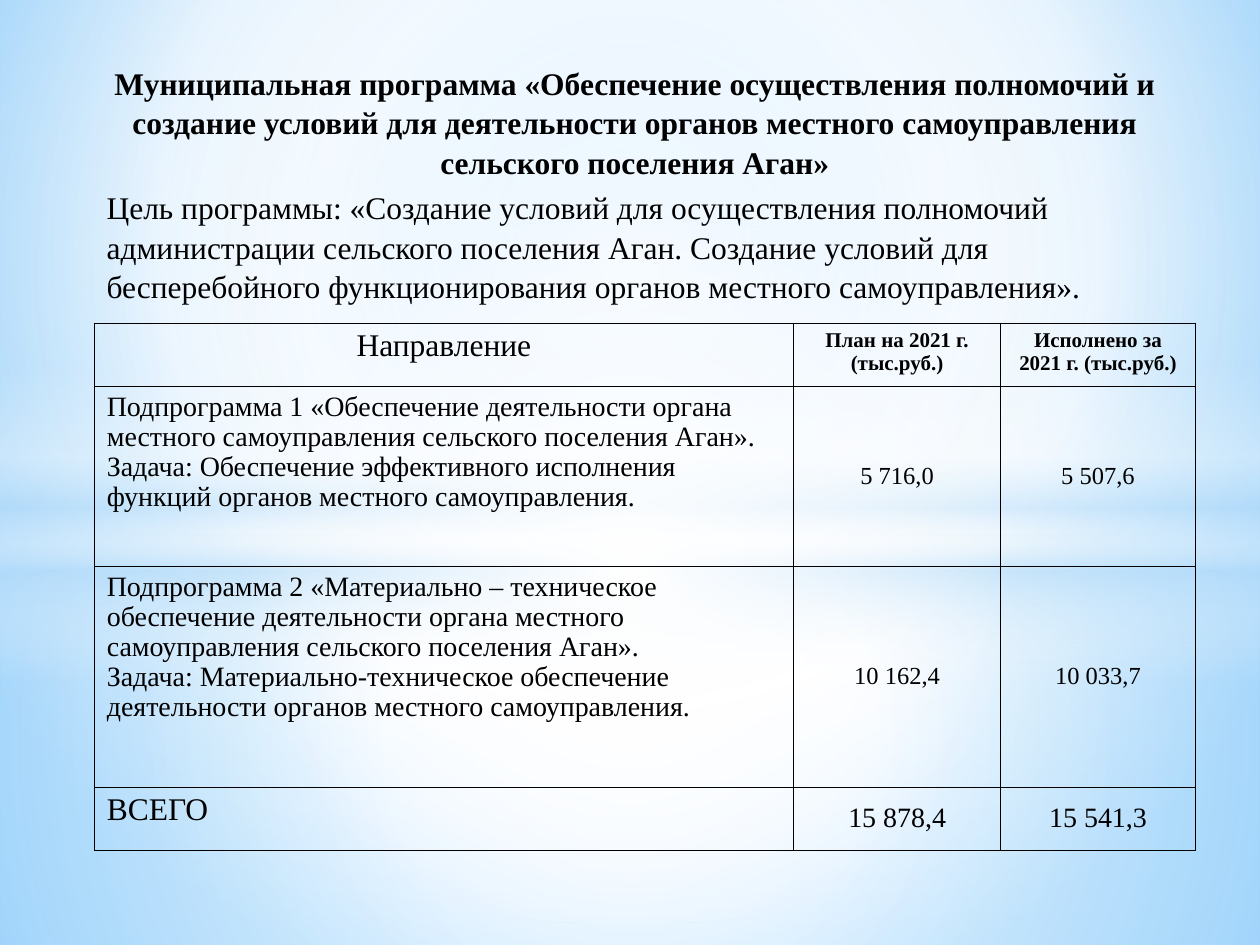
from dataclasses import dataclass
from typing import Optional

import pptx
import pptx.dml.color
import pptx.enum.shapes
import pptx.enum.text
import pptx.oxml
import pptx.oxml.ns
import pptx.util
from pptx.dml.color import RGBColor
from pptx.util import Cm

BLACK = RGBColor(0x00, 0x00, 0x00)
WHITE = RGBColor(0xFF, 0xFF, 0xFF)
PALE_BLUE = RGBColor(0xB4, 0xDC, 0xFA)
SKY = RGBColor(0x9E, 0xD5, 0xFF)
BRIGHT_BLUE = RGBColor(0x5B, 0xB9, 0xFF)

FONT = "Times New Roman"
LEFT = pptx.enum.text.PP_ALIGN.LEFT
CENTER = pptx.enum.text.PP_ALIGN.CENTER
TOP = pptx.enum.text.MSO_ANCHOR.TOP
MIDDLE = pptx.enum.text.MSO_ANCHOR.MIDDLE
RECTANGLE = pptx.enum.shapes.MSO_SHAPE.RECTANGLE
OVAL = pptx.enum.shapes.MSO_SHAPE.OVAL
MIDPOINT = (50, 50, 50, 50)


@dataclass
class Stop:
    position: int
    color: RGBColor
    opacity: int = 100


@dataclass
class Glow:
    """A full-width backdrop shape; a focus of None means a vertical gradient."""
    kind: int
    top: float
    height: float
    stops: list[Stop]
    focus: Optional[tuple[int, int, int, int]] = MIDPOINT


@dataclass
class Entry:
    text: str
    size: int
    bold: bool = False
    align: int = CENTER
    anchor: int = MIDDLE


GLOWS = [
    Glow(RECTANGLE, 10.75, 8.3,
         [Stop(0, WHITE, 91), Stop(37, WHITE, 76), Stop(100, PALE_BLUE, 79)]),
    Glow(RECTANGLE, 0, 10.75,
         [Stop(0, WHITE, 89), Stop(48, WHITE, 62), Stop(100, PALE_BLUE, 79)]),
    Glow(RECTANGLE, 7.37, 6.35,
         [Stop(0, WHITE, 0), Stop(29, WHITE, 30), Stop(45, PALE_BLUE, 40),
          Stop(55, WHITE, 26), Stop(65, PALE_BLUE, 60), Stop(100, WHITE, 0)], None),
    Glow(OVAL, 4.45, 14.17, [Stop(0, WHITE), Stop(54, WHITE, 0)]),
]

HEADING = ("Муниципальная программа «Обеспечение осуществления полномочий и создание "
           "условий для деятельности органов местного самоуправления сельского поселения Аган»")
GOAL = ("Цель программы: «Создание условий для осуществления полномочий администрации "
        "сельского поселения Аган. Создание условий для бесперебойного функционирования "
        "органов местного самоуправления».")

COLUMN_WIDTHS = [14.1, 4.17, 3.93]
ROW_HEIGHTS = [1.27, 3.63, 4.45, 1.27]
ROWS = [
    [Entry("Направление", 18, anchor=TOP),
     Entry("План на 2021 г.\n(тыс.руб.)", 12, True, anchor=TOP),
     Entry("Исполнено за\n2021 г. (тыс.руб.)", 12, True, anchor=TOP)],
    [Entry("Подпрограмма 1 «Обеспечение деятельности органа местного самоуправления "
           "сельского поселения Аган».\nЗадача: Обеспечение эффективного исполнения "
           "функций органов местного самоуправления.", 16, align=LEFT, anchor=TOP),
     Entry("5 716,0", 14), Entry("5 507,6", 14)],
    [Entry("Подпрограмма 2 «Материально – техническое обеспечение деятельности органа "
           "местного самоуправления сельского поселения Аган».\nЗадача: "
           "Материально-техническое обеспечение деятельности органов местного "
           "самоуправления.", 16, align=LEFT, anchor=TOP),
     Entry("10 162,4", 14), Entry("10 033,7", 14)],
    [Entry("ВСЕГО", 18, align=LEFT, anchor=TOP),
     Entry("15 878,4", 16), Entry("15 541,3", 16)],
]


def set_gradient(fill, element, stops: list[Stop], focus) -> None:
    """Give the fill inside element its stops and direction."""
    fill.gradient()
    gradient = next(element.iter(pptx.oxml.ns.qn("a:gradFill")))
    marks = "".join(
        f'<a:gs pos="{stop.position * 1000}"><a:srgbClr val="{stop.color}">'
        f'<a:alpha val="{stop.opacity * 1000}"/></a:srgbClr></a:gs>' for stop in stops)
    if focus is None:
        direction = '<a:lin ang="5400000" scaled="0"/>'
    else:
        sides = " ".join(f'{side}="{value * 1000}"' for side, value in zip("ltrb", focus))
        direction = f'<a:path path="circle"><a:fillToRect {sides}/></a:path>'
    gradient.getparent().replace(gradient, pptx.oxml.parse_xml(
        f'<a:gradFill {pptx.oxml.ns.nsdecls("a")} rotWithShape="1">'
        f'<a:gsLst>{marks}</a:gsLst>{direction}</a:gradFill>'))


def draw_glow(page, glow: Glow, width: int) -> None:
    shape = page.shapes.add_shape(glow.kind, 0, Cm(glow.top), width, Cm(glow.height))
    shape.shadow.inherit = False
    shape.line.fill.background()
    set_gradient(shape.fill, shape.element, glow.stops, glow.focus)


def write(frame, entry: Entry, spacing: float) -> None:
    frame.text = entry.text
    for para in frame.paragraphs:
        para.alignment = entry.align
        para.line_spacing = spacing
        para.space_before = para.space_after = pptx.util.Pt(0)
        for span in para.runs:
            span.font.name = FONT
            span.font.size = pptx.util.Pt(entry.size)
            span.font.bold = entry.bold
            span.font.color.rgb = BLACK


def place_text(box, top: float, height: float, entry: Entry) -> None:
    box.left, box.top, box.width, box.height = Cm(1.9), Cm(top), Cm(21.8), Cm(height)
    frame = box.text_frame
    write(frame, entry, 1.05)
    frame.word_wrap = True
    frame.auto_size = pptx.enum.text.MSO_AUTO_SIZE.NONE
    frame.vertical_anchor = entry.anchor


def outline_cell(cell) -> None:
    properties = cell._tc.get_or_add_tcPr()
    for index, side in enumerate(("lnL", "lnR", "lnT", "lnB")):
        properties.insert(index, pptx.oxml.parse_xml(
            f'<a:{side} {pptx.oxml.ns.nsdecls("a")} w="12700"><a:solidFill>'
            f'<a:srgbClr val="{BLACK}"/></a:solidFill></a:{side}>'))


def draw_table(page) -> None:
    table = page.shapes.add_table(
        len(ROWS), len(COLUMN_WIDTHS), Cm(1.9), Cm(6.52),
        Cm(sum(COLUMN_WIDTHS)), Cm(sum(ROW_HEIGHTS))).table
    table.first_row = table.horz_banding = False
    for column, width in zip(table.columns, COLUMN_WIDTHS):
        column.width = Cm(width)
    for row, height, entries in zip(table.rows, ROW_HEIGHTS, ROWS):
        row.height = Cm(height)
        for cell, entry in zip(row.cells, entries):
            write(cell.text_frame, entry, 0.96)
            cell.vertical_anchor = entry.anchor
            cell.fill.background()
            outline_cell(cell)


def main() -> None:
    deck = pptx.Presentation()
    deck.slide_width, deck.slide_height = Cm(25.4), Cm(19.05)
    page = deck.slides.add_slide(deck.slide_layouts[5])

    # Backdrop
    set_gradient(page.background.fill, page.element,
                 [Stop(0, SKY), Stop(60, WHITE), Stop(100, BRIGHT_BLUE)], (20, 10, 20, 60))
    for glow in GLOWS:
        draw_glow(page, glow, deck.slide_width)

    # Heading, raised above the backdrop, and programme goal
    title = page.shapes.title
    title.element.getparent().append(title.element)
    place_text(title, 1.12, 2.5, Entry(HEADING, 18, True, anchor=TOP))
    goal = page.shapes.add_textbox(0, 0, 0, 0)
    place_text(goal, 3.63, 2.6, Entry(GOAL, 18, align=LEFT, anchor=TOP))

    # Spending by subprogramme
    draw_table(page)
    deck.save("out.pptx")


if __name__ == "__main__":
    main()
